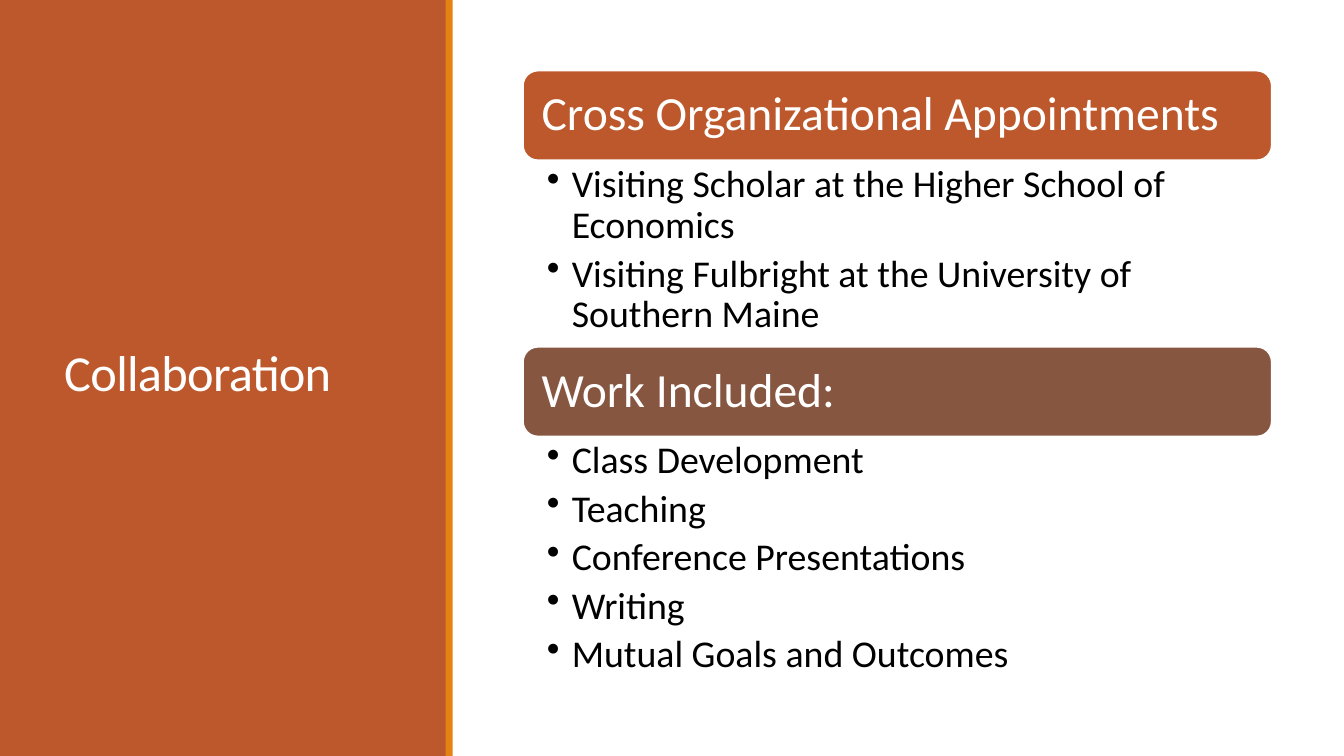
"""Build the Collaboration slide: a title panel beside two headed bullet lists."""
import pptx
import pptx.dml.color
import pptx.enum.shapes
import pptx.enum.text
import pptx.oxml.ns
import pptx.util
from dataclasses import dataclass
from lxml import etree

Cm = pptx.util.Cm
Pt = pptx.util.Pt
Kind = pptx.enum.shapes.MSO_SHAPE
Anchor = pptx.enum.text.MSO_ANCHOR

TITLE = "Collaboration"
SECTIONS = [
    {
        "heading": "Cross Organizational Appointments",
        "color": "BD582C",
        "list_height": 4.7,
        "items": [
            "Visiting Scholar at the Higher School of Economics",
            "Visiting Fulbright at the University of Southern Maine",
        ],
    },
    {
        "heading": "Work Included:",
        "color": "865640",
        "list_height": 6.45,
        "items": [
            "Class Development",
            "Teaching",
            "Conference Presentations",
            "Writing",
            "Mutual Goals and Outcomes",
        ],
    },
]


@dataclass(frozen=True)
class Theme:
    font: str = "Calibri"
    panel: str = "BD582C"
    accent: str = "E48312"
    light: str = "FFFFFF"
    dark: str = "000000"
    title_size: float = 36
    heading_size: float = 34
    item_size: float = 27
    outline: float = 1.25


THEME = Theme()
SLIDE_WIDTH, SLIDE_HEIGHT = 33.87, 19.05
PANEL_WIDTH, STRIP_LEFT, STRIP_WIDTH = 11.25, 11.23, 0.18
TITLE_BOX = (1.37, 1.45, 8.56, 16.03)
SECTION_LEFT, SECTION_TOP, SECTION_WIDTH = 13.18, 1.78, 18.87
HEADING_HEIGHT = 2.26
BULLET_INDENT = 0.63


def rgb(value):
    return pptx.dml.color.RGBColor.from_string(value)


def add_block(slide, kind, box, fill, outline=None):
    shape = slide.shapes.add_shape(kind, *map(Cm, box))
    shape.shadow.inherit = False
    shape.fill.solid()
    shape.fill.fore_color.rgb = rgb(fill)
    if outline:
        shape.line.color.rgb = rgb(outline)
        shape.line.width = Pt(THEME.outline)
    else:
        shape.line.fill.background()
    return shape


def add_bullet(paragraph):
    properties = paragraph._p.get_or_add_pPr()
    properties.set("marL", str(Cm(BULLET_INDENT)))
    properties.set("indent", str(-Cm(BULLET_INDENT)))
    bullet = etree.SubElement(properties, pptx.oxml.ns.qn("a:buChar"))
    bullet.set("char", "•")


def write_text(shape, lines, *, size, color, insets, anchor=Anchor.MIDDLE,
               line_spacing=0.9, space_after=0, tracking=0, bulleted=False):
    frame = shape.text_frame
    frame.word_wrap = True
    frame.vertical_anchor = anchor
    (frame.margin_left, frame.margin_top,
     frame.margin_right, frame.margin_bottom) = map(Cm, insets)
    for index, line in enumerate(lines):
        paragraph = frame.add_paragraph() if index else frame.paragraphs[0]
        paragraph.alignment = pptx.enum.text.PP_ALIGN.LEFT
        paragraph.line_spacing = line_spacing
        paragraph.space_after = Pt(space_after)
        if bulleted:
            add_bullet(paragraph)
        run = paragraph.add_run()
        run.text = line
        run.font.name = THEME.font
        run.font.size = Pt(size)
        run.font.color.rgb = rgb(color)
        if tracking:
            run.font._element.set("spc", str(round(tracking * 100)))


def add_section(slide, section, top):
    heading = add_block(
        slide, Kind.ROUNDED_RECTANGLE,
        (SECTION_LEFT, top, SECTION_WIDTH, HEADING_HEIGHT),
        section["color"], THEME.light)
    write_text(heading, [section["heading"]], size=THEME.heading_size,
               color=THEME.light, insets=(0.36, 0.36, 0.36, 0.36))
    list_top = top + HEADING_HEIGHT
    item_list = slide.shapes.add_textbox(
        *map(Cm, (SECTION_LEFT, list_top, SECTION_WIDTH, section["list_height"])))
    write_text(item_list, section["items"], size=THEME.item_size,
               color=THEME.dark, insets=(0.6, 0.12, 0.67, 0.12),
               anchor=Anchor.TOP, space_after=0.2 * THEME.item_size, bulleted=True)
    return list_top + section["list_height"]


def main():
    presentation = pptx.Presentation()
    presentation.slide_width = Cm(SLIDE_WIDTH)
    presentation.slide_height = Cm(SLIDE_HEIGHT)
    slide = presentation.slides.add_slide(presentation.slide_layouts[6])

    add_block(slide, Kind.RECTANGLE, (0, 0, PANEL_WIDTH, SLIDE_HEIGHT), THEME.panel)
    title = slide.shapes.add_textbox(*map(Cm, TITLE_BOX))
    write_text(title, [TITLE], size=THEME.title_size, color=THEME.light,
               insets=(0.25, 0.13, 0.25, 0.13), line_spacing=0.85, tracking=-0.5)
    add_block(slide, Kind.RECTANGLE, (STRIP_LEFT, 0, STRIP_WIDTH, SLIDE_HEIGHT),
              THEME.accent)

    top = SECTION_TOP
    for section in SECTIONS:
        top = add_section(slide, section, top)

    presentation.save("out.pptx")


if __name__ == "__main__":
    main()
